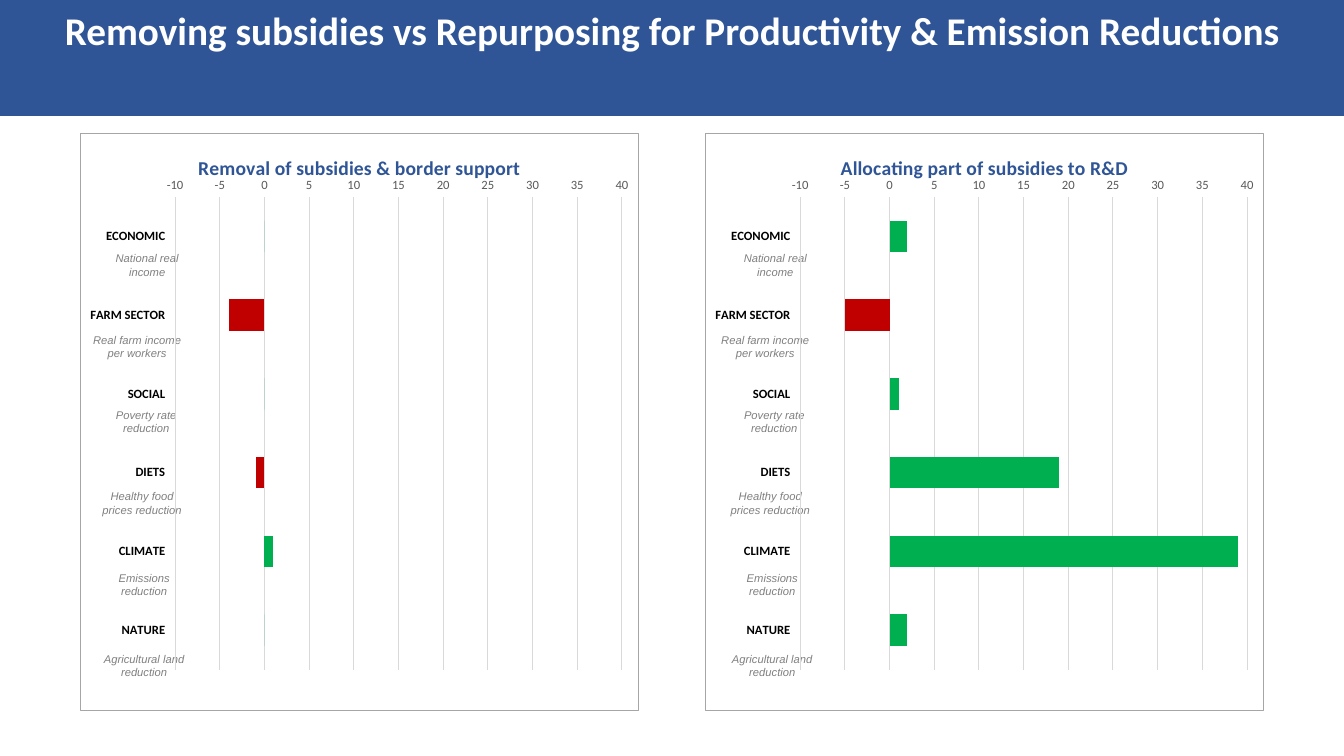
"""Build a slide that sets removing farm subsidies against repurposing them."""
from dataclasses import dataclass
from lxml import etree
from pptx import Presentation
from pptx import util as u
from pptx.chart.data import CategoryChartData
from pptx.dml.color import RGBColor as Rgb
from pptx.enum import chart as ch, text as tx
from pptx.oxml import parse_xml
from pptx.oxml.ns import nsdecls, qn

TITLE = "Removing subsidies vs Repurposing for Productivity & Emission Reductions"
ROWS = [
    ("ECONOMIC", "National real income", 0.11, 0.94),
    ("FARM SECTOR", "Real farm income per workers", 0.01, 1.75),
    ("SOCIAL", "Poverty rate reduction", 0.10, 2.49),
    ("DIETS", "Healthy food prices reduction", 0.06, 3.30),
    ("CLIMATE", "Emissions reduction", 0.08, 4.11),
    ("NATURE", "Agricultural land reduction", 0.08, 4.91),
]
PANELS = [
    ("Allocating part of subsidies to R&D", [2, -5, 1, 19, 39, 2], 6.99, 0.03),
    ("Removal of subsidies & border support", [0, -4, 0, -1, 1, 0], 0.79, 0),
]
WIDE, HIGH = 13.33, 7.5
TOP, WIDTH, HEIGHT = 1.32, 5.55, 5.73
NOTE = (1.12, 0.74)
PLOT = {"x": 0.17, "y": 0.11, "w": 0.8, "h": 0.82}


@dataclass(frozen=True)
class Theme:
    blue: str = "2F5597"
    white: str = "FFFFFF"
    black: str = "000000"
    gain: str = "00B050"
    loss: str = "C00000"
    note: str = "808080"
    tick: str = "595959"
    grid: str = "D9D9D9"
    frame: str = "A6A6A6"
    face: str = "Calibri"
    side: str = "Arial"
    head: int = 28
    title: int = 14
    base: int = 10
    axis: int = 9
    small: int = 8


T = Theme()


def style(font, size, color, face=T.face, bold=False, italic=False):
    font.size, font.name = u.Pt(size), face
    font.bold, font.italic = bold, italic
    font.color.rgb = Rgb.from_string(color)


def rule(line, color):
    line.color.rgb = Rgb.from_string(color)
    line.width = u.Pt(0.75)


def place(shape, *box):
    shape.left, shape.top, shape.width, shape.height = map(u.Inches, box)


def add_head(slide):
    head = slide.shapes.title
    place(head, 0, -0.02, WIDE, 1.17)
    head.fill.solid()
    head.fill.fore_color.rgb = Rgb.from_string(T.blue)
    frame = head.text_frame
    frame.text = TITLE
    frame.auto_size = tx.MSO_AUTO_SIZE.NONE
    frame.vertical_anchor = tx.MSO_ANCHOR.TOP
    frame.margin_top = u.Inches(0.14)
    para = frame.paragraphs[0]
    para.alignment, para.line_spacing = tx.PP_ALIGN.CENTER, 0.9
    style(para.runs[0].font, T.head, T.white, bold=True)


def add_notes(slide, left):
    for _, words, dx, dy in ROWS:
        box = slide.shapes.add_textbox(
            *map(u.Inches, (left + dx, TOP + dy, *NOTE)))
        frame = box.text_frame
        frame.word_wrap = True
        frame.vertical_anchor = tx.MSO_ANCHOR.MIDDLE
        frame.text = words
        para = frame.paragraphs[0]
        para.alignment = tx.PP_ALIGN.CENTER
        style(para.runs[0].font, T.small, T.note, T.side, italic=True)


def frame_chart(chart):
    root = chart._chartSpace
    root.find(qn("c:chart")).addnext(parse_xml(
        f'<c:spPr {nsdecls("c", "a")}><a:noFill/><a:ln w="9525"><a:solidFill>'
        f'<a:srgbClr val="{T.frame}"/></a:solidFill></a:ln></c:spPr>'))
    area = root.find(".//" + qn("c:plotArea"))
    for old in area.findall(qn("c:layout")):
        area.remove(old)
    lay = etree.Element(qn("c:layout"))
    area.insert(0, lay)
    man = etree.SubElement(lay, qn("c:manualLayout"))
    parts = {"layoutTarget": "inner", "xMode": "edge", "yMode": "edge", **PLOT}
    for tag, val in parts.items():
        etree.SubElement(man, qn("c:" + tag), val=str(val))


def add_bars(slide, name, vals, left):
    data = CategoryChartData()
    data.categories = [row[0] for row in ROWS]
    data.add_series(name, vals)
    chart = slide.shapes.add_chart(
        ch.XL_CHART_TYPE.BAR_STACKED,
        *map(u.Inches, (left, TOP, WIDTH, HEIGHT)), data).chart
    style(chart.font, T.base, T.black)
    chart.has_legend = False
    chart.has_title = True
    frame = chart.chart_title.text_frame
    frame.text = name
    style(frame.paragraphs[0].runs[0].font, T.title, T.blue, bold=True)

    cats, nums = chart.category_axis, chart.value_axis
    for axis in (cats, nums):
        axis.major_tick_mark = axis.minor_tick_mark = ch.XL_TICK_MARK.NONE
    cats.reverse_order = True
    cats.crosses = ch.XL_AXIS_CROSSES.MAXIMUM
    cats.tick_label_position = ch.XL_TICK_LABEL_POSITION.LOW
    style(cats.tick_labels.font, T.axis, T.black, bold=True)
    rule(cats.format.line, T.grid)
    nums.minimum_scale, nums.maximum_scale, nums.major_unit = -10, 40, 5
    style(nums.tick_labels.font, T.axis, T.tick)
    nums.format.line.fill.background()
    rule(nums.major_gridlines.format.line, T.grid)

    plot = chart.plots[0]
    plot.gap_width, plot.overlap, plot.vary_by_categories = 150, 100, False
    bars = plot.series[0]
    bars.invert_if_negative = False
    bars.format.fill.solid()
    bars.format.fill.fore_color.rgb = Rgb.from_string(T.gain)
    for i, val in enumerate(vals):
        if val < 0:
            fill = bars.points[i].format.fill
            fill.solid()
            fill.fore_color.rgb = Rgb.from_string(T.loss)
    frame_chart(chart)


def main():
    deck = Presentation()
    deck.slide_width, deck.slide_height = u.Inches(WIDE), u.Inches(HIGH)
    slide = deck.slides.add_slide(deck.slide_layouts[5])
    add_head(slide)
    for name, vals, left, shift in PANELS:
        add_notes(slide, left + shift)
        add_bars(slide, name, vals, left)
    deck.save("out.pptx")


if __name__ == "__main__":
    main()
